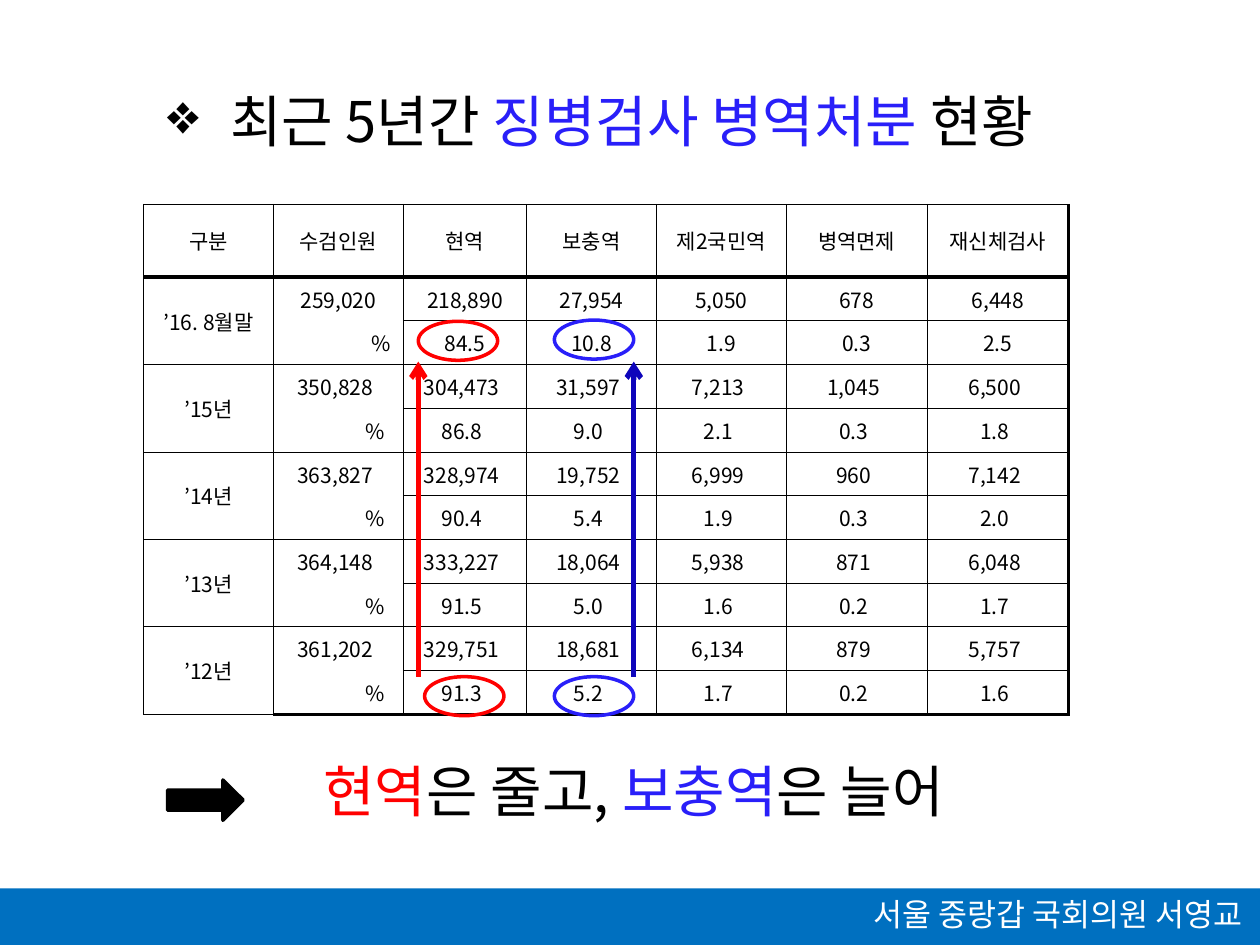
from lxml.etree import SubElement
from pptx import Presentation
from pptx.dml.color import RGBColor
from pptx.enum.shapes import MSO_CONNECTOR as Connector, MSO_SHAPE as Shape
from pptx.enum.text import MSO_ANCHOR as Anchor, PP_ALIGN as Align
from pptx.oxml.ns import qn
from pptx.util import Inches, Pt

FONT = "Noto Sans CJK KR"
BLACK = RGBColor(0x00, 0x00, 0x00)
WHITE = RGBColor(0xFF, 0xFF, 0xFF)
RED = RGBColor(0xFF, 0x00, 0x00)
BLUE = RGBColor(0x29, 0x1F, 0xF9)
DARK_BLUE = RGBColor(0x0E, 0x05, 0xBB)
FOOTER_BLUE = RGBColor(0x00, 0x70, 0xC0)

HAIR, THIN, MEDIUM, THICK = 0.28, 0.56, 1.7, 2.55
COLUMN_WIDTHS = [1.03, 1.03, 0.98, 1.03, 1.03, 1.12, 1.12]
HEADER_HEIGHT, ROW_HEIGHT = 0.58, 0.347
HEADERS = ["구분", "수검인원", "현역", "보충역", "제2국민역", "병역면제", "재신체검사"]
YEARS = [
    ("’16. 8월말", ["259,020", "218,890", "27,954", "5,050", "678", "6,448"],
     ["%", "84.5", "10.8", "1.9", "0.3", "2.5"]),
    ("’15년", ["350,828", "304,473", "31,597", "7,213", "1,045", "6,500"],
     ["%", "86.8", "9.0", "2.1", "0.3", "1.8"]),
    ("’14년", ["363,827", "328,974", "19,752", "6,999", "960", "7,142"],
     ["%", "90.4", "5.4", "1.9", "0.3", "2.0"]),
    ("’13년", ["364,148", "333,227", "18,064", "5,938", "871", "6,048"],
     ["%", "91.5", "5.0", "1.6", "0.2", "1.7"]),
    ("’12년", ["361,202", "329,751", "18,681", "6,134", "879", "5,757"],
     ["%", "91.3", "5.2", "1.7", "0.2", "1.6"]),
]


def write_line(frame, spans, size, align):
    """Write coloured spans as the only paragraph of a text frame."""
    para = frame.paragraphs[0]
    para.alignment = align
    para.font.size = Pt(size)
    para.font.name = FONT
    SubElement(para._p.pPr.find(qn("a:defRPr")), qn("a:ea"), typeface=FONT)
    for text, color in spans:
        span = para.add_run()
        span.text = text
        span.font.color.rgb = color
    return para


def add_text(page, box, spans, size, align=Align.CENTER):
    """Add a one-line text box and return its paragraph."""
    frame = page.shapes.add_textbox(*map(Inches, box)).text_frame
    frame.word_wrap = True
    frame.vertical_anchor = Anchor.MIDDLE
    return write_line(frame, spans, size, align)


def add_figure(page, kind, box, fill=None, line=None):
    """Add a preset shape with an optional fill and outline."""
    figure = page.shapes.add_shape(kind, *map(Inches, box))
    figure.shadow.inherit = False
    if fill is None:
        figure.fill.background()
    else:
        figure.fill.solid()
        figure.fill.fore_color.rgb = fill
    if line is None:
        figure.line.fill.background()
    else:
        figure.line.color.rgb = line
        figure.line.width = Pt(2)


def add_title(page, box):
    """Add the bulleted heading."""
    spans = [("최근 5년간 ", BLACK), ("징병검사 병역처분 ", BLUE), ("현황", BLACK)]
    properties = add_text(page, box, spans, 32)._p.pPr
    properties.set("marL", str(Inches(0.5)))
    properties.set("indent", str(-Inches(0.5)))
    bullet = SubElement(properties, qn("a:buChar"), char="❖")
    properties.insert(0, bullet)


def set_borders(cell, widths):
    """Draw left, right, top and bottom borders; zero means no line."""
    properties = cell._tc.get_or_add_tcPr()
    for side, width in zip("LRTB", widths):
        edge = SubElement(properties, qn(f"a:ln{side}"), w=str(Pt(width)))
        if width:
            fill = SubElement(edge, qn("a:solidFill"))
            SubElement(fill, qn("a:srgbClr"), val=str(BLACK))
        else:
            SubElement(edge, qn("a:noFill"))


def border_widths(row, column, last_row, last_column):
    """Return the border widths that belong to a table position."""
    left = THIN if column else HAIR
    right = MEDIUM if column == last_column else THIN
    top = {0: HAIR, 1: THICK}.get(row, THIN)
    bottom = {0: THICK, last_row: MEDIUM}.get(row, THIN)
    if column == 1 and row:
        top, bottom = (top, 0) if row % 2 else (0, bottom)
    return left, right, top, bottom


def add_status_table(page, box):
    """Add the table with a count row and a percent row for each year."""
    rows = [HEADERS]
    for year, counts, shares in YEARS:
        rows += [[year, *counts], ["", *shares]]
    last_row, last_column = len(rows) - 1, len(HEADERS) - 1
    table = page.shapes.add_table(len(rows), len(HEADERS), *map(Inches, box)).table
    table.first_row = table.horz_banding = False
    for column, width in zip(table.columns, COLUMN_WIDTHS):
        column.width = Inches(width)
    for index, row in enumerate(table.rows):
        row.height = Inches(ROW_HEIGHT if index else HEADER_HEIGHT)
    for r, values in enumerate(rows):
        for c, value in enumerate(values):
            cell = table.cell(r, c)
            cell.vertical_anchor = Anchor.MIDDLE
            if r > 2 and c:
                cell.margin_right = Inches(0.15)
            set_borders(cell, border_widths(r, c, last_row, last_column))
            cell.fill.background()
            if value:
                align = Align.RIGHT if value == "%" else Align.CENTER
                write_line(cell.text_frame, [(value, BLACK)], 12, align)
    for r in range(1, last_row, 2):
        table.cell(r, 0).merge(table.cell(r + 1, 0))


def add_trend(page, x, top, bottom, ring_lefts, ring_color, arrow_color):
    """Ring the newest and oldest share and join them with an upward arrow."""
    for left, y in zip(ring_lefts, (top, bottom)):
        add_figure(page, Shape.OVAL, (left, y, 0.63, 0.31), line=ring_color)
    ends = map(Inches, (x, bottom, x, 2.87))
    arrow = page.shapes.add_connector(Connector.STRAIGHT, *ends)
    arrow.line.color.rgb = arrow_color
    arrow.line.width = Pt(3)
    SubElement(arrow.line._get_or_add_ln(), qn("a:tailEnd"), type="arrow")
    SubElement(arrow._element.spPr, qn("a:effectLst"))


def add_conclusion(page, box):
    """Add the summary line and its block arrow."""
    left, top, _, _ = box
    spans = [("현역", RED), ("은 줄고, ", BLACK), ("보충역", BLUE), ("은 늘어", BLACK)]
    add_text(page, box, spans, 32)
    add_figure(page, Shape.RIGHT_ARROW, (left, top + 0.24, 0.6, 0.32), BLACK, BLACK)


def add_footer(page, box):
    """Add the footer band with the name at its right end."""
    left, top, width, _ = box
    add_figure(page, Shape.RECTANGLE, box, FOOTER_BLUE)
    name_box = (left + width - 3.98, top, 3.94, 0.41)
    add_text(page, name_box, [("서울 중랑갑 국회의원 서영교", WHITE)], 18, Align.RIGHT)


def main():
    """Build the slide and save the deck."""
    deck = Presentation()
    deck.slide_width, deck.slide_height = Inches(10), Inches(7.5)
    page = deck.slides.add_slide(deck.slide_layouts[6])
    add_status_table(page, (1.14, 1.62, 7.34, 4.05))
    add_title(page, (0.83, 0.63, 7.87, 0.64))
    add_trend(page, 3.32, 2.55, 5.37, (3.32, 3.37), RED, RED)
    add_trend(page, 5.03, 2.54, 5.37, (4.4, 4.4), BLUE, DARK_BLUE)
    add_conclusion(page, (1.33, 5.95, 7.4, 0.64))
    add_footer(page, (0, 7.05, 10, 0.45))
    deck.save("out.pptx")


if __name__ == "__main__":
    main()
